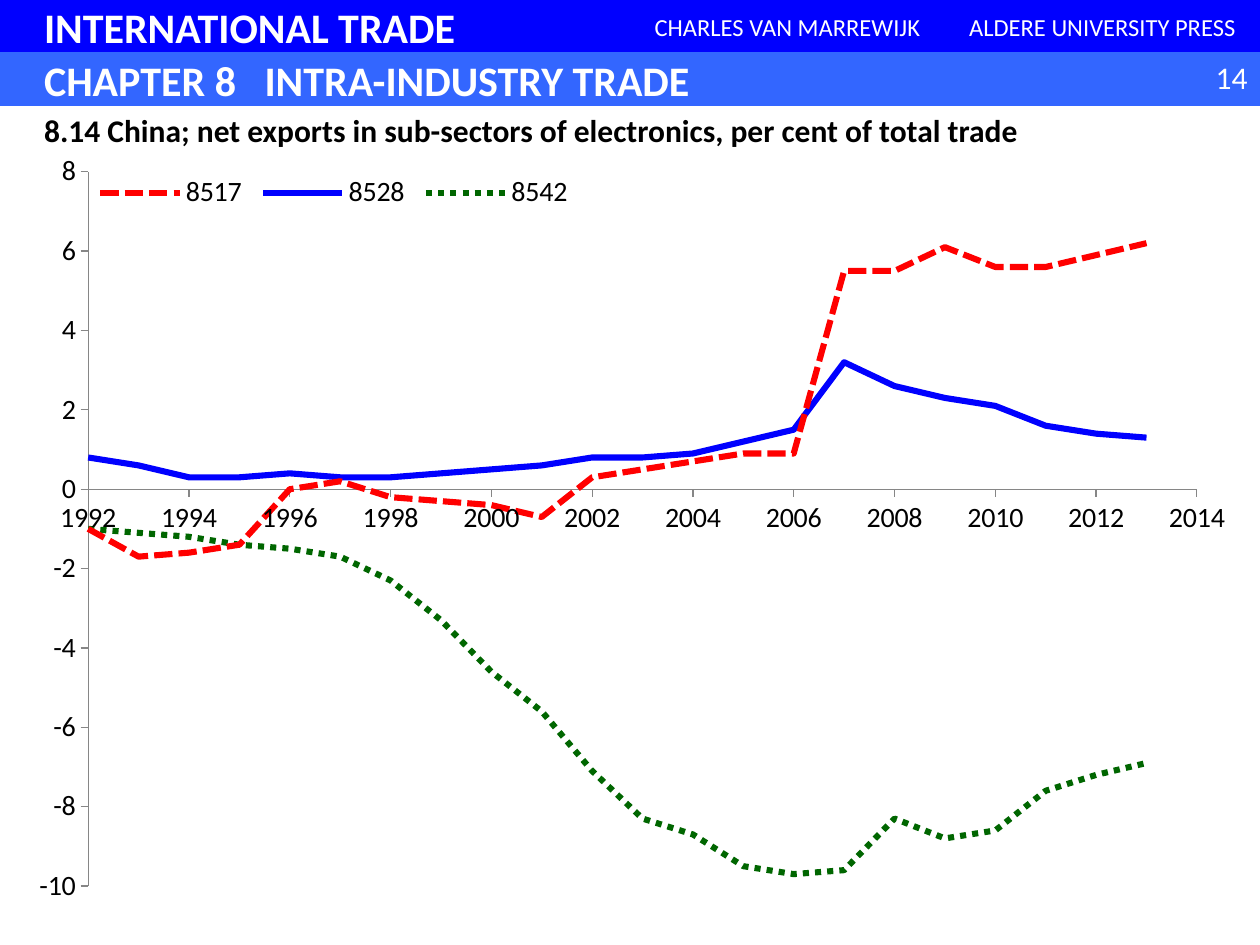
from lxml.etree import SubElement
from pptx import Presentation
from pptx.chart.data import XyChartData
from pptx.dml.color import RGBColor
from pptx.enum.chart import XL_CHART_TYPE, XL_LEGEND_POSITION, XL_TICK_MARK
from pptx.enum.dml import MSO_LINE
from pptx.enum.shapes import MSO_SHAPE
from pptx.enum.text import MSO_ANCHOR, PP_ALIGN
from pptx.oxml import parse_xml
from pptx.oxml.ns import nsdecls, qn
from pptx.util import Inches, Pt

FONT = "Calibri"
BLUE = RGBColor(0x00, 0x00, 0xFF)
LIGHT_BLUE = RGBColor(0x33, 0x66, 0xFF)
RED = RGBColor(0xFF, 0x00, 0x00)
GREEN = RGBColor(0x00, 0x66, 0x00)
GRAY = RGBColor(0x86, 0x86, 0x86)
WHITE = RGBColor(0xFF, 0xFF, 0xFF)
BLACK = RGBColor(0x00, 0x00, 0x00)

BAND = 0.42
INDENT = 0.35
YEARS = range(1992, 2014)
SERIES = [
    ("8517", RED, MSO_LINE.SQUARE_DOT,
     [-1, -1.7, -1.6, -1.4, 0, 0.2, -0.2, -0.3, -0.4, -0.7, 0.3,
      0.5, 0.7, 0.9, 0.9, 5.5, 5.5, 6.1, 5.6, 5.6, 5.9, 6.2]),
    ("8528", BLUE, None,
     [0.8, 0.6, 0.3, 0.3, 0.4, 0.3, 0.3, 0.4, 0.5, 0.6, 0.8,
      0.8, 0.9, 1.2, 1.5, 3.2, 2.6, 2.3, 2.1, 1.6, 1.4, 1.3]),
    ("8542", GREEN, MSO_LINE.ROUND_DOT,
     [-1, -1.1, -1.2, -1.4, -1.5, -1.7, -2.3, -3.3, -4.6, -5.6, -7.1,
      -8.3, -8.7, -9.5, -9.7, -9.6, -8.3, -8.8, -8.6, -7.6, -7.2, -6.9]),
]
DASHES = {MSO_LINE.SQUARE_DOT: "sysDash", MSO_LINE.ROUND_DOT: "sysDot"}


def set_text(sp, text, size, color, bold=False, align=PP_ALIGN.LEFT):
    """Write one formatted paragraph into a shape and return it."""
    tf = sp.text_frame
    tf.word_wrap = True
    tf.text = text
    p = tf.paragraphs[0]
    p.alignment = align
    font = p.runs[0].font
    font.name, font.size, font.bold = FONT, Pt(size), bold
    font.color.rgb = color
    return p


def add_band(s, box, color, text, size, bold=False, align=PP_ALIGN.LEFT):
    """Add a filled header rectangle with text."""
    sp = s.shapes.add_shape(MSO_SHAPE.RECTANGLE, *map(Inches, box))
    sp.shadow.inherit = False
    sp.fill.solid()
    sp.fill.fore_color.rgb = color
    sp.line.color.rgb = color
    sp.line.width = Pt(0.75)
    sp.text_frame.vertical_anchor = MSO_ANCHOR.MIDDLE
    if align == PP_ALIGN.LEFT:
        sp.text_frame.margin_left = Inches(INDENT)
    return set_text(sp, text, size, WHITE, bold, align)


def add_header(s, left, top, width):
    """Build the book band, the chapter band and the slide number."""
    quarter = width / 4
    add_band(s, (left, top, width, BAND), BLUE, "INTERNATIONAL TRADE", 24, True)
    for i, label in enumerate(("CHARLES VAN MARREWIJK", "ALDERE UNIVERSITY PRESS")):
        box = (left + (2 + i) * quarter, top, quarter, BAND)
        add_band(s, box, BLUE, label, 14, align=PP_ALIGN.CENTER)
    p = add_band(s, (left, top + BAND, width, BAND), LIGHT_BLUE,
                 "CHAPTER 8\tINTRA-INDUSTRY TRADE", 24, True)
    tabs = SubElement(p._p.get_or_add_pPr(), qn("a:tabLst"))
    SubElement(tabs, qn("a:tab"), pos=str(Inches(1.75)), algn="l")
    number = s.shapes.add_textbox(Inches(left + width - 0.67), Inches(top + 0.41),
                                  Inches(0.67), Inches(0.4))
    set_text(number, "14", 18, WHITE, align=PP_ALIGN.RIGHT)


def set_layout(parent, index, box, inner=False):
    """Place a chart part by fractions of the chart area."""
    for old in parent.findall(qn("c:layout")):
        parent.remove(old)
    target = '<c:layoutTarget val="inner"/>' if inner else ""
    modes = '<c:xMode val="edge"/><c:yMode val="edge"/>'
    sizes = "".join(f'<c:{k} val="{v}"/>' for k, v in zip("xywh", box))
    parent.insert(index, parse_xml(
        f'<c:layout {nsdecls("c")}><c:manualLayout>{target}{modes}{sizes}'
        "</c:manualLayout></c:layout>"))


def format_axis(axis, low, high):
    """Set the scale, ticks and font of an axis."""
    axis.minimum_scale, axis.maximum_scale, axis.major_unit = low, high, 2
    axis.has_major_gridlines = False
    axis.has_title = False
    axis.major_tick_mark = XL_TICK_MARK.OUTSIDE
    axis.minor_tick_mark = XL_TICK_MARK.NONE
    axis.format.line.color.rgb = GRAY
    axis.format.line.width = Pt(0.75)
    labels = axis.tick_labels
    labels.number_format, labels.number_format_is_linked = "0", False
    labels.font.size = Pt(16)


def add_trade_chart(s, box):
    """Add the scatter chart of net exports by sub-sector."""
    data = XyChartData()
    for name, _, _, values in SERIES:
        series = data.add_series(name)
        for year, value in zip(YEARS, values):
            series.add_data_point(year, value)
    chart = s.shapes.add_chart(XL_CHART_TYPE.XY_SCATTER_LINES_NO_MARKERS,
                               *map(Inches, box), data).chart
    chart.has_title = False
    chart.font.name, chart.font.size = FONT, Pt(10)
    chart.font.color.rgb = BLACK
    plot = chart.plots[0]
    plot.vary_by_categories = False
    for series, (_, color, dash, _) in zip(plot.series, SERIES):
        series.smooth = False
        line = series.format.line
        line.color.rgb, line.width = color, Pt(3.5)
        if dash:
            line.dash_style = dash
            line._ln.find(qn("a:prstDash")).set("val", DASHES[dash])
    format_axis(chart.category_axis, 1992, 2014)
    format_axis(chart.value_axis, -10, 8)
    chart.has_legend = True
    legend = chart.legend
    legend.position = XL_LEGEND_POSITION.BOTTOM
    legend.include_in_layout = True
    legend.font.size = Pt(16)
    set_layout(legend._element, 1, (0.07, 0.08, 0.39, 0.05))
    set_layout(chart._chartSpace.chart.plotArea, 0, (0.07, 0.08, 0.88, 0.85), True)


def add_title(s, box):
    """Place the slide title in front of the chart."""
    title = s.shapes.title
    title.left, title.top, title.width, title.height = map(Inches, box)
    title.text_frame.vertical_anchor = MSO_ANCHOR.TOP
    set_text(title, "8.14 China; net exports in sub-sectors of electronics, "
                    "per cent of total trade", 18, BLACK, True)
    s.shapes._spTree.append(title._element)


def main():
    """Build and save the slide."""
    prs = Presentation()
    prs.slide_width, prs.slide_height = Inches(10), Inches(7.5)
    s = prs.slides.add_slide(prs.slide_layouts[5])
    add_header(s, 0, 0, 10)
    add_trade_chart(s, (0, 0.83, 10, 6.67))
    add_title(s, (0.25, 0.83, 8.25, 0.4))
    prs.save("out.pptx")


if __name__ == "__main__":
    main()
